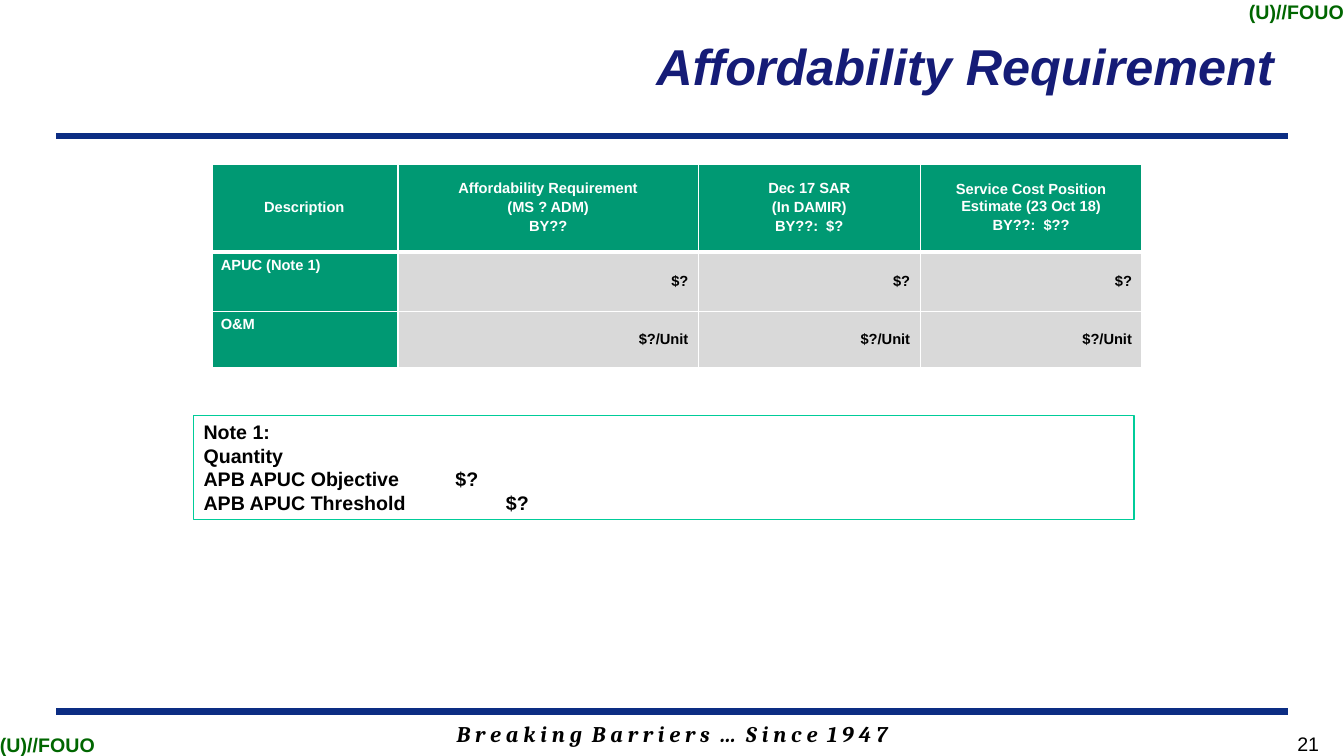
from lxml.etree import SubElement
from pptx import Presentation
from pptx.dml.color import RGBColor
from pptx.enum.shapes import MSO_CONNECTOR, MSO_SHAPE
from pptx.enum.text import MSO_ANCHOR as ANCHOR, PP_ALIGN as ALIGN
from pptx.oxml.ns import qn
from pptx.util import Cm, Pt

NAVY = RGBColor(0x15, 0x1C, 0x77)
RULE_BLUE = RGBColor(0x0C, 0x2D, 0x83)
MARKING_GREEN = RGBColor(0x00, 0x66, 0x00)
HEADER_GREEN = RGBColor(0x00, 0x99, 0x73)
NOTE_GREEN = RGBColor(0x00, 0xCC, 0x99)
GREY = RGBColor(0xD9, 0xD9, 0xD9)
BLACK = RGBColor(0, 0, 0)
WHITE = RGBColor(0xFF, 0xFF, 0xFF)

MARKING = "(U)//FOUO"
MARKING_FORMAT = {"size": Pt(14), "color": MARKING_GREEN, "bold": True}
LABELS = [
    ("B r e a k i n g  B a r r i e r s  …  S i n c e  1 9 4 7",
     (4.8, 18.03, 24.28, 0.94), ALIGN.CENTER, ANCHOR.TOP,
     {"name": "Cambria", "size": Pt(16), "color": BLACK, "bold": True, "italic": True}),
    (MARKING, (31.46, 0, 2.41, 0.61), ALIGN.RIGHT, ANCHOR.TOP, MARKING_FORMAT),
    (MARKING, (0, 18.44, 2.41, 0.61), ALIGN.LEFT, ANCHOR.BOTTOM, MARKING_FORMAT),
    ("21", (32.08, 18.42, 1.78, 0.64), ALIGN.CENTER, ANCHOR.MIDDLE,
     {"size": Pt(14), "color": BLACK}),
    ("Affordability Requirement", (11.35, 0, 21.01, 3.3), ALIGN.RIGHT, ANCHOR.MIDDLE,
     {"size": Pt(36), "color": NAVY, "bold": True, "italic": True}),
]
RULES_Y = [17.93, 3.43]
RULE_LEFT, RULE_RIGHT = 1.42, 32.46

COSTS = [
    [["Description"],
     ["Affordability Requirement", "(MS ? ADM)", "BY??"],
     ["Dec 17 SAR", "(In DAMIR)", "BY??:  $?"],
     ["Service Cost Position Estimate (23 Oct 18)", "BY??:  $??"]],
    [["APUC (Note 1)"], ["$?"], ["$?"], ["$?"]],
    [["O&M"], ["$?/Unit"], ["$?/Unit"], ["$?/Unit"]],
]
COLUMN_WIDTHS = [4.72, 7.57, 5.59, 5.59]
ROW_HEIGHTS = [2.24, 1.5, 1.42]
COSTS_LEFT, COSTS_TOP = 5.31, 4.11

NOTE = ["Note 1:", "Quantity", "APB APUC Objective\t\t$?", "APB APUC Threshold\t\t$?"]
NOTE_AREA = (4.88, 10.46, 23.7, 2.64)


def write(frame, lines, align, formats, gap=Pt(0)):
    for index, line in enumerate(lines):
        paragraph = frame.add_paragraph() if index else frame.paragraphs[0]
        paragraph.alignment = align
        if index:
            paragraph.space_before = gap
        run = paragraph.add_run()
        run.text = line
        for key, value in {"name": "Arial", **formats}.items():
            if key == "color":
                run.font.color.rgb = value
            else:
                setattr(run.font, key, value)


def add_borders(cell, widths):
    properties = cell._tc.get_or_add_tcPr()
    for position, (side, width) in enumerate(widths.items()):
        border = SubElement(properties, qn("a:" + side), w=str(Pt(width)))
        fill = SubElement(border, qn("a:solidFill"))
        SubElement(fill, qn("a:srgbClr"), val=str(WHITE))
        properties.insert(position, border)


def add_labels(slide):
    for text, area, align, anchor, formats in LABELS:
        frame = slide.shapes.add_textbox(*map(Cm, area)).text_frame
        frame.word_wrap = text != MARKING
        frame.vertical_anchor = anchor
        if text == MARKING:
            for side in ("left", "top", "right", "bottom"):
                setattr(frame, "margin_" + side, 0)
        write(frame, [text], align, formats)


def add_rules(slide):
    for y in RULES_Y:
        rule = slide.shapes.add_connector(
            MSO_CONNECTOR.STRAIGHT, Cm(RULE_LEFT), Cm(y), Cm(RULE_RIGHT), Cm(y))
        rule.line.color.rgb = RULE_BLUE
        rule.line.width = Pt(4.5)
        SubElement(rule._element.spPr, qn("a:effectLst"))


def add_costs(slide):
    costs = slide.shapes.add_table(
        len(COSTS), len(COLUMN_WIDTHS), Cm(COSTS_LEFT), Cm(COSTS_TOP),
        Cm(sum(COLUMN_WIDTHS)), Cm(sum(ROW_HEIGHTS))).table
    for column, width in zip(costs.columns, COLUMN_WIDTHS):
        column.width = Cm(width)
    for r, (row, height) in enumerate(zip(COSTS, ROW_HEIGHTS)):
        costs.rows[r].height = Cm(height)
        for c, lines in enumerate(row):
            cell = costs.cell(r, c)
            header, stub = r == 0, c == 0
            green = header or stub
            cell.fill.solid()
            cell.fill.fore_color.rgb = HEADER_GREEN if green else GREY
            cell.vertical_anchor = ANCHOR.TOP if stub and not header else ANCHOR.MIDDLE
            align = ALIGN.CENTER if header else ALIGN.LEFT if stub else ALIGN.RIGHT
            write(cell.text_frame, lines, align,
                  {"size": Pt(10.5), "bold": True, "color": WHITE if green else BLACK},
                  Pt(2.1))
            add_borders(cell, {"lnL": 3 if stub else 1, "lnR": 1,
                               "lnT": 3 if r < 2 else 1, "lnB": 3 if header else 1})


def add_note(slide):
    note = slide.shapes.add_shape(MSO_SHAPE.RECTANGLE, *map(Cm, NOTE_AREA))
    note.shadow.inherit = False
    note.fill.background()
    note.line.color.rgb = NOTE_GREEN
    note.line.width = Pt(0.75)
    note.text_frame.word_wrap = True
    note.text_frame.vertical_anchor = ANCHOR.TOP
    write(note.text_frame, NOTE, ALIGN.LEFT,
          {"size": Pt(14), "color": BLACK, "bold": True})


def main():
    deck = Presentation()
    deck.slide_width, deck.slide_height = Cm(33.87), Cm(19.05)
    slide = deck.slides.add_slide(deck.slide_layouts[6])
    add_rules(slide)
    add_labels(slide)
    add_costs(slide)
    add_note(slide)
    deck.save("out.pptx")


if __name__ == "__main__":
    main()
